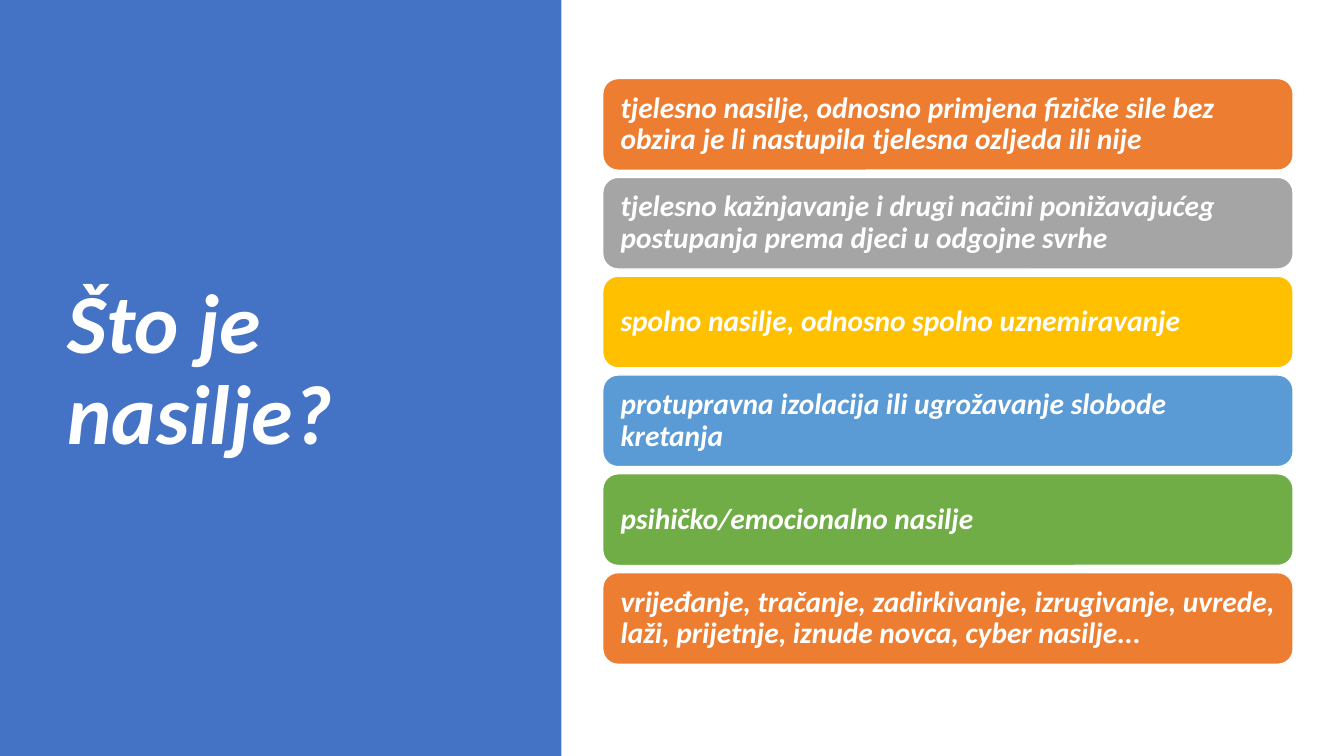
from dataclasses import dataclass

from pptx import Presentation
from pptx.dml.color import RGBColor
from pptx.enum.shapes import MSO_SHAPE
from pptx.enum.text import MSO_ANCHOR, MSO_AUTO_SIZE, PP_ALIGN
from pptx.shapes.autoshape import Shape
from pptx.slide import Slide
from pptx.text.text import TextFrame
from pptx.util import Cm, Pt

RECTANGLE = MSO_SHAPE.RECTANGLE
ROUNDED = MSO_SHAPE.ROUNDED_RECTANGLE
MIDDLE = MSO_ANCHOR.MIDDLE
LEFT = PP_ALIGN.LEFT
NO_AUTOFIT = MSO_AUTO_SIZE.NONE

TITLE_ONLY_LAYOUT = 5
FONT = "Calibri"
WHITE = "FFFFFF"
BLUE = "4472C4"
ORANGE = "ED7D31"

BOX_LEFT, BOX_TOP = 15.19, 1.98
BOX_WIDTH, BOX_HEIGHT = 17.4, 2.31
BOX_PITCH = 2.49
BOX_INSET = 0.34


@dataclass(frozen=True)
class ViolenceForm:
    text: str
    fill: str


VIOLENCE_FORMS = [
    ViolenceForm("tjelesno nasilje, odnosno primjena fizičke sile bez obzira "
                 "je li nastupila tjelesna ozljeda ili nije", ORANGE),
    ViolenceForm("tjelesno kažnjavanje i drugi načini ponižavajućeg "
                 "postupanja prema djeci u odgojne svrhe", "A5A5A5"),
    ViolenceForm("spolno nasilje, odnosno spolno uznemiravanje", "FFC000"),
    ViolenceForm("protupravna izolacija ili ugrožavanje slobode kretanja", "5B9BD5"),
    ViolenceForm("psihičko/emocionalno nasilje", "70AD47"),
    ViolenceForm("vrijeđanje, tračanje, zadirkivanje, izrugivanje, uvrede, "
                 "laži, prijetnje, iznude novca, cyber nasilje...", ORANGE),
]


def colour(hex_value: str) -> RGBColor:
    return RGBColor.from_string(hex_value)


def write_text(frame: TextFrame, text: str, size: float) -> None:
    """Fill the frame with white bold italic text, left and vertically centred."""
    frame.text = text
    frame.word_wrap = True
    frame.auto_size = NO_AUTOFIT
    frame.vertical_anchor = MIDDLE
    para = frame.paragraphs[0]
    para.alignment = LEFT
    para.line_spacing = 0.9
    for span in para.runs:
        span.font.name = FONT
        span.font.size = Pt(size)
        span.font.bold = True
        span.font.italic = True
        span.font.color.rgb = colour(WHITE)


def add_filled_shape(page: Slide, kind: MSO_SHAPE, left: float, top: float,
                     width: float, height: float, fill: str) -> Shape:
    shape = page.shapes.add_shape(kind, Cm(left), Cm(top), Cm(width), Cm(height))
    shape.shadow.inherit = False
    shape.fill.solid()
    shape.fill.fore_color.rgb = colour(fill)
    shape.line.fill.background()
    return shape


def add_title(page: Slide) -> None:
    title = page.shapes.title
    title.left, title.top = Cm(1.45), Cm(1.73)
    title.width, title.height = Cm(10.57), Cm(15.29)
    write_text(title.text_frame, "Što je nasilje?", 60)
    panel = add_filled_shape(page, RECTANGLE, 0, 0, 14.15, 19.05, BLUE)
    title.element.addprevious(panel.element)


def add_form_box(page: Slide, form: ViolenceForm, row: int) -> None:
    box = add_filled_shape(page, ROUNDED, BOX_LEFT, BOX_TOP + row * BOX_PITCH,
                           BOX_WIDTH, BOX_HEIGHT, form.fill)
    box.line.color.rgb = colour(WHITE)
    box.line.width = Pt(1)
    frame = box.text_frame
    frame.margin_left = frame.margin_right = Cm(BOX_INSET)
    frame.margin_top = frame.margin_bottom = Cm(BOX_INSET)
    write_text(frame, form.text, 21)


def main() -> None:
    deck = Presentation()
    deck.slide_width, deck.slide_height = Cm(33.87), Cm(19.05)
    page = deck.slides.add_slide(deck.slide_layouts[TITLE_ONLY_LAYOUT])
    add_title(page)
    for row, form in enumerate(VIOLENCE_FORMS):
        add_form_box(page, form, row)
    deck.save("out.pptx")


if __name__ == "__main__":
    main()
